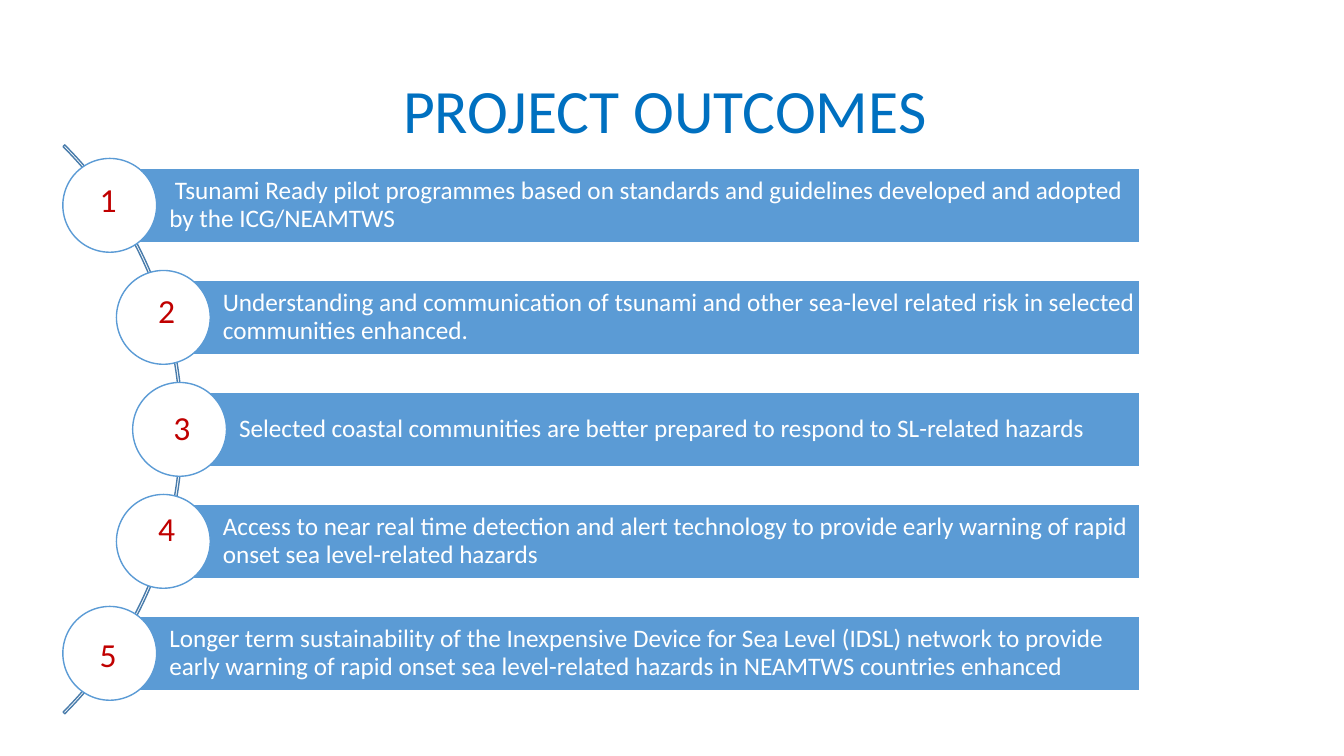
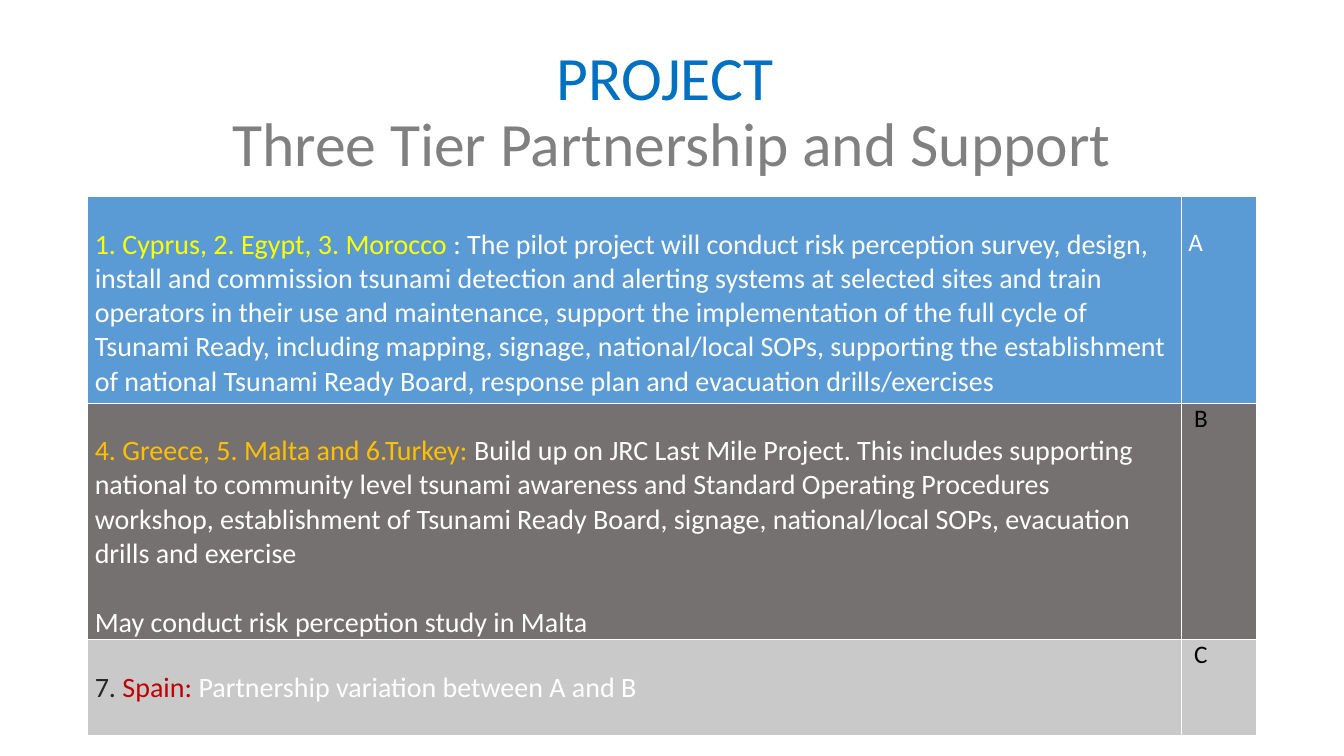
import pptx
import pptx.dml.color
import pptx.enum.shapes
import pptx.enum.text
import pptx.oxml
import pptx.oxml.ns
import pptx.util

Pt = pptx.util.Pt
SHAPE = pptx.enum.shapes.MSO_SHAPE
ALIGN = pptx.enum.text.PP_ALIGN
ANCHOR = pptx.enum.text.MSO_ANCHOR

FONT = "Calibri"
WHITE, BLACK, BLUE = "FFFFFF", "000000", "5B9BD5"
TITLE_BLUE, TITLE_GREY, RED, ARC_BLUE = "0070C0", "808080", "C00000", "497CAB"

BAR_RIGHT, BAR_HEIGHT, CIRCLE = 814.3, 53.4, 67
MIDDLE_Y, PITCH = 306.7, 80
ARC_LEFT, ARC_SIZE = -444.2, 574.6

# Circle centre, left and top of the number, wording
OUTCOMES = [
    (78.4, 64, 124.6, " Tsunami Ready pilot programmes based on standards and guidelines "
     "developed and adopted by the ICG/NEAMTWS"),
    (116.7, 105.8, 203.8, "Understanding and communication of tsunami and other sea-level "
     "related risk in selected communities enhanced."),
    (128.3, 116.7, 287.3, "Selected coastal communities are better prepared to respond to "
     "SL-related hazards"),
    (116.7, 105.8, 359.3, "Access to near real time detection and alert technology to provide "
     "early warning of rapid onset sea level-related hazards"),
    (78.4, 64, 449.3, "Longer term sustainability of the Inexpensive Device for Sea Level "
     "(IDSL) network to provide early warning of rapid onset sea level-related hazards in "
     "NEAMTWS countries enhanced"),
]

COLUMN_WIDTHS = (781.2, 54)
LINE_GAP = 22
# Row height, fill, paragraphs of (wording, colour) runs, and the tier's letter,
# its colour, left margin and top margin
TIERS = [
    (147.6, BLUE, [[
        ("1. Cyprus, 2. Egypt, 3. Morocco ", "FFFF00"),
        (": The pilot project will conduct risk perception survey, design, install and "
         "commission tsunami detection and alerting systems at selected sites and train "
         "operators in their use and maintenance, support the implementation of the full "
         "cycle of Tsunami Ready, including mapping, signage, national/local SOPs, "
         "supporting the establishment of national Tsunami Ready Board, response plan and "
         "evacuation drills/exercises", WHITE)]],
     ("A", WHITE, 5, LINE_GAP)),
    (169, "767171", [[
        ("4. Greece, 5. Malta and 6.Turkey: ", "FFC000"),
        ("Build up on JRC Last Mile Project. This includes supporting national to "
         "community level tsunami awareness and Standard Operating Procedures workshop, "
         "establishment of Tsunami Ready Board, signage, national/local SOPs, evacuation "
         "drills and exercise", WHITE)],
        [("May conduct risk perception study in Malta", WHITE)]],
     ("B", BLACK, 9, 0)),
    (68.5, "C9C9C9", [[
        ("7. ", "262626"),
        ("Spain: ", RED),
        ("Partnership variation between A and B", WHITE)]],
     ("C", BLACK, 9, 0)),
]


def rgb(value):
    return pptx.dml.color.RGBColor.from_string(value)


def write(paragraph, text, *, size, color, align=ALIGN.LEFT, spacing=1.0):
    """Append a formatted run to the paragraph."""
    paragraph.alignment = align
    paragraph.line_spacing = spacing
    run = paragraph.add_run()
    run.text = text
    run.font.name = FONT
    run.font.size = Pt(size)
    run.font.color.rgb = rgb(color)


def set_margins(holder, left, top, right, bottom):
    """Set the inner margins of a text frame or a table cell."""
    holder.margin_left, holder.margin_top = Pt(left), Pt(top)
    holder.margin_right, holder.margin_bottom = Pt(right), Pt(bottom)


def add_text_box(slide, left, top, width, height, anchor=ANCHOR.TOP):
    """Add an empty wrapping text box and return its text frame."""
    frame = slide.shapes.add_textbox(Pt(left), Pt(top), Pt(width), Pt(height)).text_frame
    frame.word_wrap = True
    frame.vertical_anchor = anchor
    return frame


def add_figure(slide, preset, left, top, width, height, *, line, fill=None):
    figure = slide.shapes.add_shape(preset, Pt(left), Pt(top), Pt(width), Pt(height))
    figure.shadow.inherit = False
    figure.line.color.rgb = rgb(line)
    figure.line.width = Pt(1)
    if fill:
        figure.fill.solid()
        figure.fill.fore_color.rgb = rgb(fill)
    else:
        figure.fill.background()
    return figure


def add_title(slide, *lines):
    """Add the centred title; each line is (wording, colour)."""
    title = add_text_box(slide, 66, 28.8, 828, 104.4, ANCHOR.MIDDLE).paragraphs[0]
    for index, (text, color) in enumerate(lines):
        if index:
            title.add_line_break()
        write(title, text, size=44, color=color, align=ALIGN.CENTER, spacing=0.9)


def add_outcome(slide, index, center_x, number_left, number_top, text):
    """Add one bar with its circle and number."""
    center_y = MIDDLE_Y + (index - len(OUTCOMES) // 2) * PITCH
    bar = add_figure(slide, SHAPE.RECTANGLE, center_x, center_y - BAR_HEIGHT / 2,
                     BAR_RIGHT - center_x, BAR_HEIGHT, line=WHITE, fill=BLUE)
    frame = bar.text_frame
    frame.word_wrap = True
    frame.vertical_anchor = ANCHOR.MIDDLE
    set_margins(frame, 42.5, 3.6, 3, 3.6)
    write(frame.paragraphs[0], text, size=18, color=WHITE, spacing=0.9)
    add_figure(slide, SHAPE.OVAL, center_x - CIRCLE / 2, center_y - CIRCLE / 2,
               CIRCLE, CIRCLE, line=BLUE, fill=WHITE)
    number = add_text_box(slide, number_left, number_top, 43, 36)
    write(number.paragraphs[0], str(index + 1), size=24, color=RED)


def add_borders(cell):
    properties = cell._tc.get_or_add_tcPr()
    namespace = pptx.oxml.ns.nsdecls("a")
    for position, side in enumerate(("lnL", "lnR", "lnT", "lnB")):
        properties.insert(position, pptx.oxml.parse_xml(
            f'<a:{side} {namespace} w="12700"><a:solidFill><a:srgbClr val="{WHITE}"/>'
            f'</a:solidFill></a:{side}>'))


def fill_cell(cell, fill, paragraphs, *, size, left=5, top=0):
    """Format a cell and write its paragraphs of (wording, colour) runs."""
    cell.fill.solid()
    cell.fill.fore_color.rgb = rgb(fill)
    add_borders(cell)
    set_margins(cell, left, top, 5, 0)
    for index, runs in enumerate(paragraphs):
        frame = cell.text_frame
        paragraph = frame.add_paragraph() if index else frame.paragraphs[0]
        if index:
            paragraph.space_before = Pt(24.4)
        for text, color in runs:
            write(paragraph, text, size=size, color=color)


def add_tier_table(slide):
    tiers = slide.shapes.add_table(
        len(TIERS), len(COLUMN_WIDTHS), Pt(62.7), Pt(140.4),
        Pt(sum(COLUMN_WIDTHS)), Pt(sum(tier[0] for tier in TIERS))).table
    for column, width in zip(tiers.columns, COLUMN_WIDTHS):
        column.width = Pt(width)
    for index, (height, fill, paragraphs, mark) in enumerate(TIERS):
        letter, color, left, top = mark
        tiers.rows[index].height = Pt(height)
        fill_cell(tiers.cell(index, 0), fill, paragraphs, size=20, top=LINE_GAP)
        fill_cell(tiers.cell(index, 1), fill, [[(letter, color)]], size=18,
                  left=left, top=top)


def add_outcomes_slide(deck):
    slide = deck.slides.add_slide(deck.slide_layouts[6])
    add_title(slide, ("PROJECT OUTCOMES ", TITLE_BLUE))
    arc = add_figure(slide, SHAPE.BLOCK_ARC, ARC_LEFT, MIDDLE_Y - ARC_SIZE / 2,
                     ARC_SIZE, ARC_SIZE, line=ARC_BLUE)
    for index, value in enumerate((189, 27, 0.003)):
        arc.adjustments[index] = value
    for index, outcome in enumerate(OUTCOMES):
        add_outcome(slide, index, *outcome)


def add_partnership_slide(deck):
    slide = deck.slides.add_slide(deck.slide_layouts[6])
    add_title(slide, ("PROJECT ", TITLE_BLUE),
              ("Three Tier Partnership and Support", TITLE_GREY))
    add_tier_table(slide)


def main():
    deck = pptx.Presentation()
    deck.slide_width, deck.slide_height = Pt(960), Pt(540)
    add_outcomes_slide(deck)
    add_partnership_slide(deck)
    deck.save("out.pptx")


if __name__ == "__main__":
    main()
